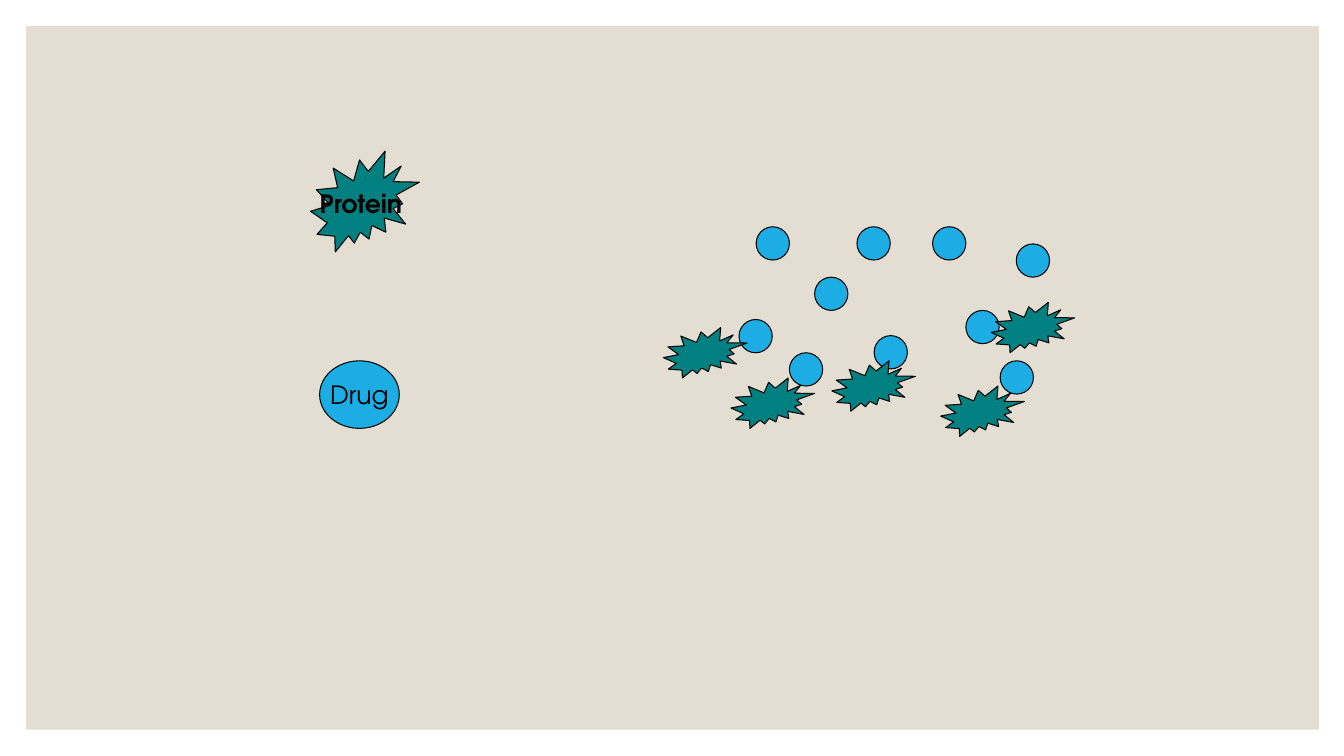
from pptx import Presentation
from pptx.dml.color import RGBColor
from pptx.enum.shapes import MSO_SHAPE
from pptx.enum.text import MSO_ANCHOR, PP_ALIGN
from pptx.util import Inches, Pt

RECTANGLE = MSO_SHAPE.RECTANGLE
OVAL = MSO_SHAPE.OVAL
BURST = MSO_SHAPE.EXPLOSION2
MIDDLE = MSO_ANCHOR.MIDDLE
CENTER = PP_ALIGN.CENTER

COLORS = {
    "background": "FFFFFF",
    "panel": "E3DED1",
    "drug": "1CADE4",
    "protein": "008080",
    "ink": "000000",
}

FREE_DRUGS = [(8.5, 2.25), (9.25, 2.25), (10.08, 2.42), (8.08, 2.75), (7.5, 2.25)]
BOUND_DRUGS = [(8.67, 3.33), (7.83, 3.5), (9.58, 3.08), (7.33, 3.17), (9.92, 3.58)]
PROTEINS = [(8.25, 3.58), (9.33, 3.83), (7.25, 3.75), (6.58, 3.25), (9.83, 3)]


class BindingSlide:
    font_name = "TeX Gyre Adventor"
    font_size = Pt(18)
    line_width = Pt(0.75)

    def __init__(self, presentation):
        self.slide = presentation.slides.add_slide(presentation.slide_layouts[6])
        fill = self.slide.background.fill
        fill.solid()
        fill.fore_color.rgb = self.color("background")

    def color(self, name):
        return RGBColor.from_string(COLORS[name])

    def shape(self, kind, color, left, top, width, height):
        shape = self.slide.shapes.add_shape(
            kind, Inches(left), Inches(top), Inches(width), Inches(height)
        )
        shape.shadow.inherit = False
        shape.fill.solid()
        shape.fill.fore_color.rgb = self.color(color)
        return shape

    def panel(self, left, top, width, height):
        shape = self.shape(RECTANGLE, "panel", left, top, width, height)
        shape.line.fill.background()

    def outlined(self, kind, color, left, top, width, height):
        shape = self.shape(kind, color, left, top, width, height)
        shape.line.color.rgb = self.color("ink")
        shape.line.width = self.line_width
        return shape

    def drug(self, left, top, width=0.33, height=0.33):
        return self.outlined(OVAL, "drug", left, top, width, height)

    def protein(self, left, top, width=0.83, height=0.5):
        return self.outlined(BURST, "protein", left, top, width, height)

    def label(self, shape, text, bold=False):
        frame = shape.text_frame
        frame.word_wrap = False
        frame.vertical_anchor = MIDDLE
        paragraph = frame.paragraphs[0]
        paragraph.alignment = CENTER
        run = paragraph.add_run()
        run.text = text
        run.font.name = self.font_name
        run.font.size = self.font_size
        run.font.bold = bold
        run.font.color.rgb = self.color("ink")


def main():
    presentation = Presentation()
    presentation.slide_width = Inches(13.33)
    presentation.slide_height = Inches(7.5)
    binding = BindingSlide(presentation)
    binding.panel(0.26, 0.26, 12.82, 6.98)
    for left, top in FREE_DRUGS + BOUND_DRUGS:
        binding.drug(left, top)
    for left, top in PROTEINS:
        binding.protein(left, top)
    binding.label(binding.protein(3.08, 1.5, 1.08, 1), "Protein", bold=True)
    binding.label(binding.drug(3.17, 3.58, 0.79, 0.67), "Drug")
    presentation.save("out.pptx")


if __name__ == "__main__":
    main()
